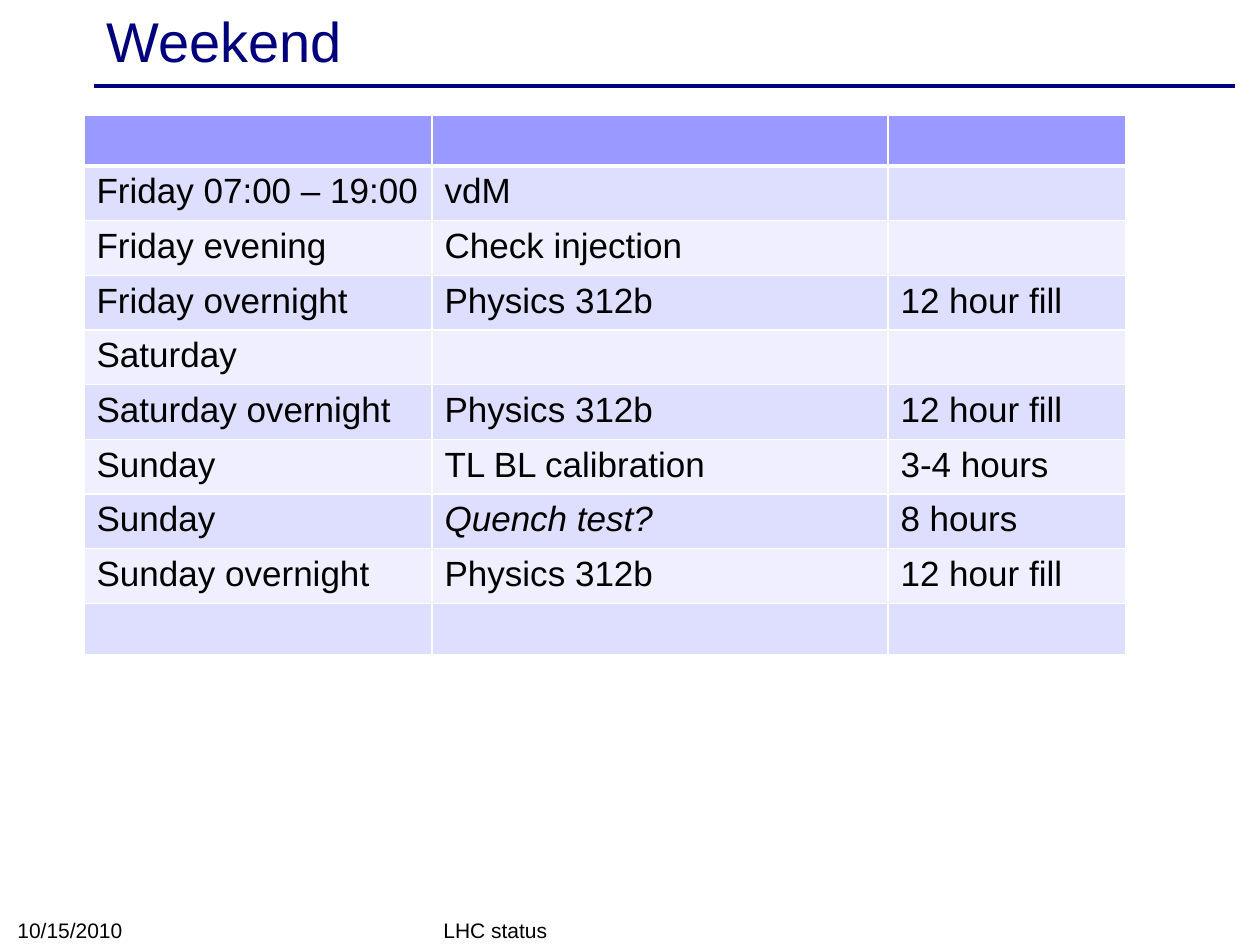
from lxml import etree
from pptx import Presentation
from pptx import util as u
from pptx.dml.color import RGBColor
from pptx.enum import shapes, text
from pptx.oxml.ns import qn

SCALE = 914400 / 126
FONT = "Arial"
NAVY, BLACK, WHITE = "00007D", "000000", "FFFFFF"
HEADER, BANDS = "9999FF", ("DEDEFF", "EFEFFF")
COLUMNS = (348, 456, 238)
ROW_HEIGHT = 51
PHYSICS = ("Physics 312b", "12 hour fill")
SCHEDULE = [
    ("", "", ""),
    ("Friday 07:00 – 19:00", "vdM", ""),
    ("Friday evening", "Check injection", ""),
    ("Friday overnight", *PHYSICS),
    ("Saturday", "", ""),
    ("Saturday overnight", *PHYSICS),
    ("Sunday", "TL BL calibration", "3-4 hours"),
    ("Sunday", "Quench test?", "8 hours"),
    ("Sunday overnight", *PHYSICS),
    ("", "", ""),
]
ITALIC = {"Quench test?"}


def px(n):
    return u.Emu(round(n * SCALE))


def rgb(value):
    return RGBColor.from_string(value)


def write(tf, words, size, color=BLACK, italic=False):
    p = tf.paragraphs[0]
    p.alignment = text.PP_ALIGN.LEFT
    r = p.add_run()
    r.text = words
    font = {"name": FONT, "size": u.Pt(size), "italic": italic}
    for key, value in font.items():
        setattr(r.font, key, value)
    r.font.color.rgb = rgb(color)


def add_label(s, words, box, size, anchor, color=BLACK):
    tf = s.shapes.add_textbox(*map(px, box)).text_frame
    tf.word_wrap = True
    tf.vertical_anchor = anchor
    write(tf, words, size, color)


def add_rule(s, x1, x2, y):
    line = s.shapes.add_connector(
        shapes.MSO_CONNECTOR.STRAIGHT, px(x1), px(y), px(x2), px(y))
    line.line.color.rgb = rgb(NAVY)
    line.line.width = u.Pt(2)
    etree.SubElement(line._element.spPr, qn("a:effectLst"))


def set_borders(cell, widths):
    """Draw white borders; widths maps the side (L, R, T, B) to points."""
    tc_pr = cell._tc.get_or_add_tcPr()
    for i, (side, width) in enumerate(widths.items()):
        ln = etree.Element(qn(f"a:ln{side}"), w=str(u.Pt(width)))
        fill = etree.SubElement(ln, qn("a:solidFill"))
        etree.SubElement(fill, qn("a:srgbClr"), val=WHITE)
        tc_pr.insert(i, ln)


def add_schedule(s, left, top):
    table = s.shapes.add_table(
        len(SCHEDULE), len(COLUMNS), px(left), px(top),
        px(sum(COLUMNS)), px(ROW_HEIGHT * len(SCHEDULE))).table
    for column, width in zip(table.columns, COLUMNS):
        column.width = px(width)
    for i, entries in enumerate(SCHEDULE):
        table.rows[i].height = px(ROW_HEIGHT)
        for j, words in enumerate(entries):
            cell = table.cell(i, j)
            cell.fill.solid()
            cell.fill.fore_color.rgb = rgb(BANDS[(i - 1) % 2] if i else HEADER)
            set_borders(cell, {"L": 1, "R": 1, "T": 3 if i == 1 else 1,
                               "B": 1 if i else 3})
            if words:
                write(cell.text_frame, words, 20, italic=words in ITALIC)


def main():
    prs = Presentation()
    prs.slide_width, prs.slide_height = px(1260), px(945)
    s = prs.slides.add_slide(prs.slide_layouts[6])
    middle, bottom = text.MSO_ANCHOR.MIDDLE, text.MSO_ANCHOR.BOTTOM
    add_rule(s, 94, 1235, 86)
    add_label(s, "Weekend", (94, 4, 1134, 72), 32, middle, NAVY)
    add_label(s, "LHC status", (431, 914, 399, 35), 12, bottom)
    add_label(s, "10/15/2010", (5, 912, 294, 37), 12, bottom)
    add_schedule(s, 84, 115)
    prs.save("out.pptx")


if __name__ == "__main__":
    main()
